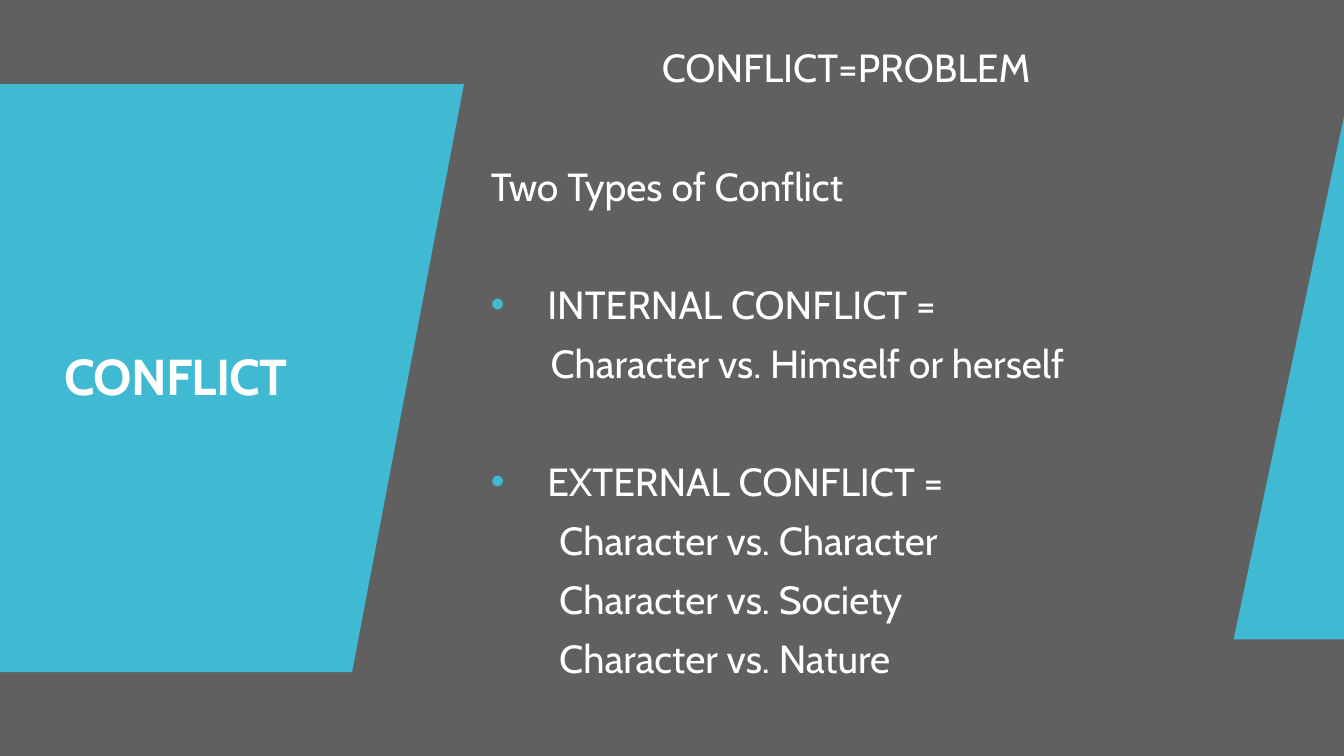
from lxml import etree
from pptx import Presentation
from pptx.dml.color import RGBColor
from pptx.enum.text import MSO_ANCHOR, MSO_AUTO_SIZE, PP_ALIGN
from pptx.oxml.ns import qn
from pptx.util import Pt

LEFT, CENTER = PP_ALIGN.LEFT, PP_ALIGN.CENTER
MIDDLE, NO_FIT = MSO_ANCHOR.MIDDLE, MSO_AUTO_SIZE.NONE

WIDTH, HEIGHT = 960, 540
GRAY, BLUE, WHITE = "606060", "40BAD2", "FFFFFF"
FONT = "Cabin"

TITLE = "CONFLICT"
TITLE_BOX = (38.9, 134.6, 231.8, 272.9)
BODY_BOX = (343.4, 82.8, 522, 429.8)
BODY_FOOT = 73

# Kind of line, text, space before
TIGHT, WIDE = 12, 54.1
LINES = [
    ("head", "CONFLICT=PROBLEM", 0),
    ("plain", "Two Types of Conflict", WIDE),
    ("bullet", "INTERNAL CONFLICT =", WIDE),
    ("inner", "Character vs. Himself or herself", TIGHT),
    ("bullet", "EXTERNAL CONFLICT =", WIDE),
    ("outer", "Character vs. Character", TIGHT),
    ("outer", "Character vs. Society", TIGHT),
    ("outer", "Character vs. Nature", TIGHT),
]
# Left margin, first-line indent
INDENTS = {
    "head": (0, 0),
    "plain": (0, 0),
    "bullet": (40.3, -40.3),
    "inner": (42.7, 0),
    "outer": (48.8, 0),
}
PANELS = [
    [(0, 60), (331.4, 60), (251.5, 480), (0, 480)],
    [(WIDTH, 83.2), (WIDTH, 456.8), (881.2, 456.8)],
]


def color(code):
    return RGBColor.from_string(code)


def add_panel(slide, points):
    pen = slide.shapes.build_freeform(Pt(points[0][0]), Pt(points[0][1]))
    pen.add_line_segments([(Pt(x), Pt(y)) for x, y in points[1:]], close=True)
    panel = pen.convert_to_shape()
    panel.shadow.inherit = False
    panel.fill.solid()
    panel.fill.fore_color.rgb = color(BLUE)
    panel.line.fill.background()


def set_box(holder, box, text):
    holder.left, holder.top, holder.width, holder.height = map(Pt, box)
    frame = holder.text_frame
    frame.text = text
    frame.word_wrap = True
    frame.auto_size = NO_FIT
    frame.vertical_anchor = MIDDLE
    return frame


def set_line(para, size, align=LEFT, bold=False, before=0):
    para.alignment = align
    para.line_spacing = 0.9
    para.space_before = Pt(before)
    font = para.runs[0].font
    font.name, font.size, font.bold = FONT, Pt(size), bold
    font.color.rgb = color(WHITE)


def set_indent(para, kind):
    margin, first = INDENTS[kind]
    props = para._p.get_or_add_pPr()
    props.set("marL", str(Pt(margin)))
    props.set("indent", str(Pt(first)))
    if kind == "bullet":
        tint = etree.SubElement(props, qn("a:buClr"))
        etree.SubElement(tint, qn("a:srgbClr")).set("val", BLUE)
        etree.SubElement(props, qn("a:buFont")).set("typeface", "Arial")
        etree.SubElement(props, qn("a:buChar")).set("char", "•")


def main():
    deck = Presentation()
    deck.slide_width, deck.slide_height = Pt(WIDTH), Pt(HEIGHT)
    slide = deck.slides.add_slide(deck.slide_layouts[0])
    slide.background.fill.solid()
    slide.background.fill.fore_color.rgb = color(GRAY)

    for points in PANELS:
        add_panel(slide, points)

    title, body = slide.placeholders
    for holder in (title, body):
        slide.shapes.element.append(holder.element)  # bring to front

    para = set_box(title, TITLE_BOX, TITLE).paragraphs[0]
    set_line(para, 36, bold=True)
    para.runs[0]._r.get_or_add_rPr().set("spc", "-60")

    frame = set_box(body, BODY_BOX, "\n".join(text for _, text, _ in LINES))
    frame.margin_top, frame.margin_bottom = 0, Pt(BODY_FOOT)
    for para, (kind, _, before) in zip(frame.paragraphs, LINES):
        set_line(para, 28, CENTER if kind == "head" else LEFT, before=before)
        set_indent(para, kind)

    deck.save("out.pptx")


if __name__ == "__main__":
    main()
